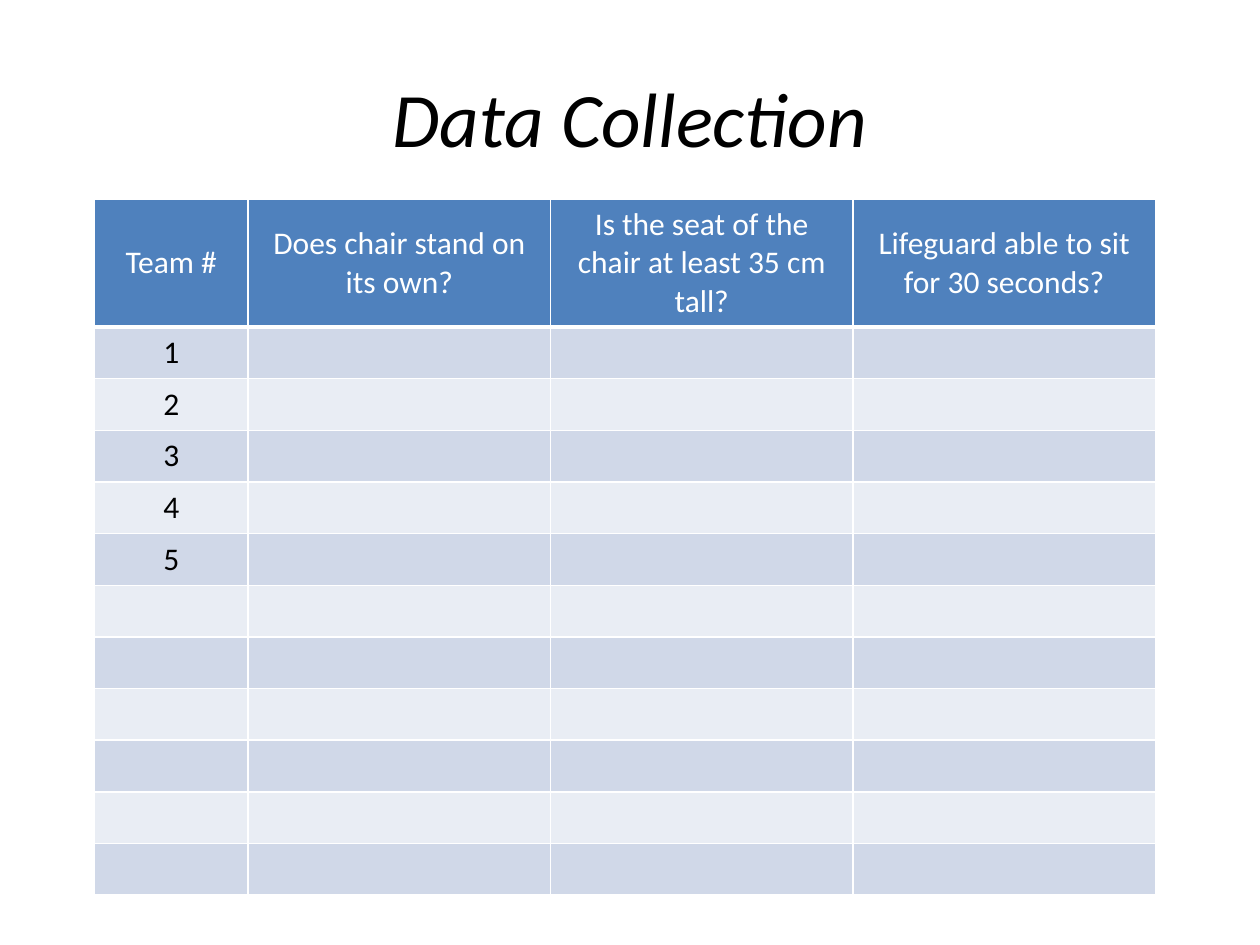
from lxml.etree import SubElement
from pptx import Presentation
from pptx.dml.color import RGBColor
from pptx.enum.text import MSO_ANCHOR, PP_ALIGN
from pptx.oxml.ns import qn
from pptx.util import Inches, Pt

HEADERS = [
    "Team #",
    "Does chair stand on its own?",
    "Is the seat of the chair at least 35 cm tall?",
    "Lifeguard able to sit for 30 seconds?",
]
TEAMS = 5
BLANK_ROWS = 6
COL_WIDTHS = [1.22, 2.4, 2.4, 2.4]
HEADER_HEIGHT = 0.95
ROW_HEIGHT = 0.41
HEADER_FILL = "4F81BD"
BAND_FILLS = ["E9EDF4", "D0D8E8"]
WHITE = "FFFFFF"
BLACK = "000000"


def rgb(value):
    return RGBColor.from_string(value)


def write_text(tf, text, color, **font):
    tf.vertical_anchor = MSO_ANCHOR.MIDDLE
    p = tf.paragraphs[0]
    p.alignment = PP_ALIGN.CENTER
    r = p.add_run()
    r.text = text
    r.font.color.rgb = rgb(color)
    for name, value in {"name": "Calibri", "bold": False, **font}.items():
        setattr(r.font, name, value)


def add_title(s, text):
    sp = s.shapes.title
    box = {"left": 0.5, "top": 0.3, "width": 9, "height": 1.25}
    for name, value in box.items():
        setattr(sp, name, Inches(value))
    write_text(sp.text_frame, text, BLACK, size=Pt(44), italic=True)


def set_borders(cell, bottom):
    tc_pr = cell._tc.get_or_add_tcPr()
    for side, width in {"lnL": 1, "lnR": 1, "lnT": 1, "lnB": bottom}.items():
        ln = SubElement(tc_pr, qn(f"a:{side}"), w=str(Pt(width)))
        fill = SubElement(ln, qn("a:solidFill"))
        SubElement(fill, qn("a:srgbClr"), val=WHITE)


def format_cell(cell, text, fill, color, bottom=1):
    set_borders(cell, bottom)
    cell.fill.solid()
    cell.fill.fore_color.rgb = rgb(fill)
    cell.vertical_anchor = MSO_ANCHOR.MIDDLE
    if text:
        write_text(cell.text_frame, text, color, size=Pt(18))


def add_results_table(s):
    numbers = [str(n + 1) for n in range(TEAMS)] + [""] * BLANK_ROWS
    heights = [HEADER_HEIGHT] + [ROW_HEIGHT] * len(numbers)
    table = s.shapes.add_table(
        len(heights), len(HEADERS), Inches(0.75), Inches(1.58),
        Inches(sum(COL_WIDTHS)), Inches(sum(heights)),
    ).table
    for column, width in zip(table.columns, COL_WIDTHS):
        column.width = Inches(width)
    for row, height in zip(table.rows, heights):
        row.height = Inches(height)
    for col, header in enumerate(HEADERS):
        format_cell(table.cell(0, col), header, HEADER_FILL, WHITE, bottom=3)
        for row, number in enumerate(numbers, 1):
            text = number if col == 0 else ""
            format_cell(table.cell(row, col), text, BAND_FILLS[row % 2], BLACK)


def main():
    prs = Presentation()
    prs.slide_width = Inches(10)
    prs.slide_height = Inches(7.5)
    s = prs.slides.add_slide(prs.slide_layouts[5])
    add_title(s, "Data Collection")
    add_results_table(s)
    prs.save("out.pptx")


if __name__ == "__main__":
    main()
